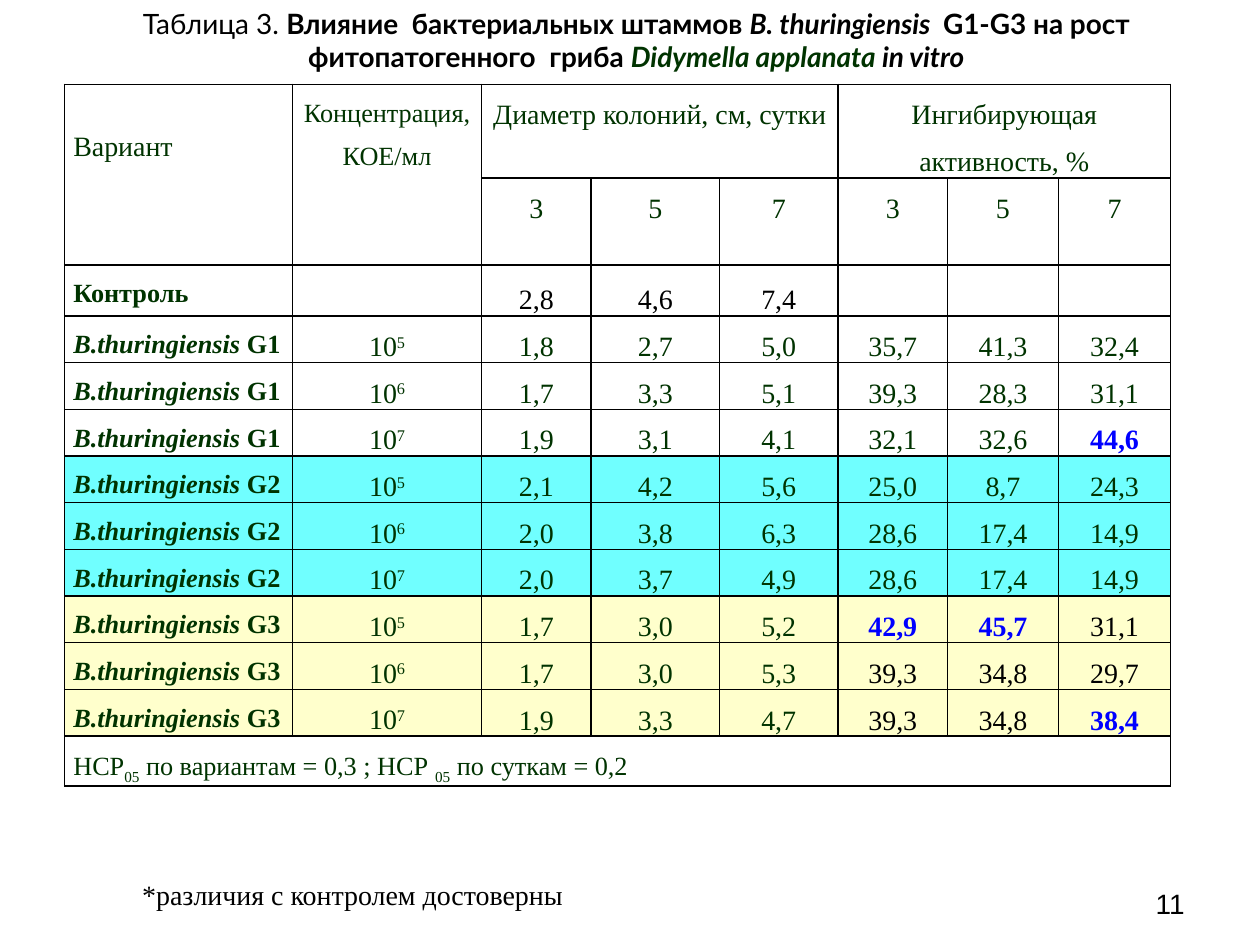
from dataclasses import dataclass

from lxml.etree import SubElement
from pptx import Presentation
from pptx.dml.color import RGBColor as Color
from pptx.enum.text import MSO_ANCHOR as Anchor
from pptx.enum.text import MSO_AUTO_SIZE as AutoSize
from pptx.enum.text import PP_ALIGN as Align
from pptx.oxml.ns import qn
from pptx.util import Pt


@dataclass(frozen=True)
class Theme:
    black: str = "000000"
    green: str = "003300"
    blue: str = "0000FF"
    cyan: str = "70FFFF"
    cream: str = "FFFFCC"
    size: float = 16
    small: float = 15
    title_font: str = "Lato"
    body_font: str = "Times New Roman"
    number_font: str = "Arial"
    border: float = 1


THEME = Theme()


def write(frame, spans, font=THEME.body_font, size=THEME.size, color=THEME.green,
          bold=False, italic=False, align=Align.LEFT, spacing=1.0, after=0):
    """Write one paragraph; a span is a text or a (text, overrides) pair."""
    para = frame.paragraphs[0]
    para.alignment, para.line_spacing = align, spacing
    para.space_before, para.space_after = Pt(0), Pt(after)
    for item in [spans] if isinstance(spans, str) else spans:
        text, own = (item, {}) if isinstance(item, str) else item
        span = para.add_run()
        span.text = text
        span.font.name, span.font.size = font, Pt(size)
        span.font.bold = own.get("bold", bold)
        span.font.italic = own.get("italic", italic)
        span.font.color.rgb = Color.from_string(own.get("color", color))
        if "baseline" in own:
            span.font._element.set("baseline", str(own["baseline"] * 1000))


class SlideBuilder:
    def __init__(self, deck, theme):
        self.theme = theme
        self.page = deck.slides.add_slide(deck.slide_layouts[5])

    def title(self, spans, left, top, width, height):
        box = self.page.shapes.title
        box.left, box.top, box.width, box.height = map(Pt, (left, top, width, height))
        frame = box.text_frame
        frame.word_wrap, frame.auto_size = True, AutoSize.NONE
        frame.vertical_anchor = Anchor.MIDDLE
        write(frame, spans, font=self.theme.title_font, color=self.theme.black,
              bold=True, align=Align.CENTER)

    def text(self, words, left, top, width, height, anchor=Anchor.TOP,
             fit=AutoSize.NONE, **style):
        frame = self.page.shapes.add_textbox(*map(Pt, (left, top, width, height))).text_frame
        frame.word_wrap, frame.auto_size = True, fit
        frame.vertical_anchor = anchor
        write(frame, words, color=self.theme.black, **style)

    def table(self, left, top, widths, heights):
        frame = self.page.shapes.add_table(
            len(heights), len(widths), Pt(left), Pt(top), Pt(sum(widths)), Pt(sum(heights)))
        grid = frame.table
        grid.first_row = grid.horz_banding = False
        for column, width in zip(grid.columns, widths):
            column.width = Pt(width)
        for row, height in zip(grid.rows, heights):
            row.height = Pt(height)
            for cell in row.cells:
                cell.fill.background()
                self.border(cell)
        return grid

    def border(self, cell):
        props = cell._tc.get_or_add_tcPr()
        for index, side in enumerate(("a:lnL", "a:lnR", "a:lnT", "a:lnB")):
            line = SubElement(props, qn(side), w=str(Pt(self.theme.border)))
            fill = SubElement(line, qn("a:solidFill"))
            SubElement(fill, qn("a:srgbClr"), val=self.theme.black)
            props.insert(index, line)

    def cell(self, cell, spans, fill=None, anchor=Anchor.TOP, side=5, top=0, **style):
        if fill:
            cell.fill.solid()
            cell.fill.fore_color.rgb = Color.from_string(fill)
        cell.vertical_anchor = anchor
        cell.margin_left = cell.margin_right = Pt(side)
        cell.margin_top, cell.margin_bottom = Pt(top), Pt(0)
        write(cell.text_frame, spans, **style)


# Colony diameters and inhibition for each strain, at 10^5, 10^6 and 10^7
CONTROL = "2,8 4,6 7,4"
STRAINS = {
    "G1": (None, ["1,8 2,7 5,0 35,7 41,3 32,4",
                  "1,7 3,3 5,1 39,3 28,3 31,1",
                  "1,9 3,1 4,1 32,1 32,6 44,6"]),
    "G2": (THEME.cyan, ["2,1 4,2 5,6 25,0 8,7 24,3",
                        "2,0 3,8 6,3 28,6 17,4 14,9",
                        "2,0 3,7 4,9 28,6 17,4 14,9"]),
    "G3": (THEME.cream, ["1,7 3,0 5,2 42,9 45,7 31,1",
                         "1,7 3,0 5,3 39,3 34,8 29,7",
                         "1,9 3,3 4,7 39,3 34,8 38,4"]),
}
BEST = {"44,6", "42,9", "45,7", "38,4"}


def fill_header(builder, grid):
    for first, last in (((0, 0), (1, 0)), ((0, 1), (1, 1)), ((0, 2), (0, 4)), ((0, 5), (0, 7))):
        grid.cell(*first).merge(grid.cell(*last))
    builder.cell(grid.cell(0, 0), "Вариант", top=18, spacing=1.5)
    centred = dict(align=Align.CENTER, spacing=1.5)
    builder.cell(grid.cell(0, 1), "Концентрация, КОЕ/мл", size=THEME.small, **centred)
    builder.cell(grid.cell(0, 2), "Диаметр колоний, см, сутки", **centred)
    builder.cell(grid.cell(0, 5), "Ингибирующая активность, %", **centred)
    for column, day in enumerate("357" * 2, start=2):
        builder.cell(grid.cell(1, column), day, **centred)


def fill_values(builder, grid, row, values, fill=None, strain=None):
    for column, value in enumerate(values.split(), start=2):
        inhibition = column > 4
        best = inhibition and value in BEST
        black = strain is None or (strain == "G3" and inhibition)
        color = THEME.blue if best else THEME.black if black else THEME.green
        layout = dict(side=1) if inhibition else dict(spacing=1.15, after=10)
        builder.cell(grid.cell(row, column), value, fill=fill, anchor=Anchor.BOTTOM, top=1,
                     color=color, bold=best, align=Align.CENTER, **layout)


def fill_body(builder, grid):
    label = dict(size=THEME.small, bold=True, spacing=1.5)
    builder.cell(grid.cell(2, 0), "Контроль", **label)
    fill_values(builder, grid, 2, CONTROL)
    row = 3
    for strain, (fill, lines) in STRAINS.items():
        for power, values in enumerate(lines, start=5):
            builder.cell(grid.cell(row, 0), [("B.thuringiensis", {"italic": True}), f" {strain}"],
                         fill=fill, **label)
            builder.cell(grid.cell(row, 1), ["10", (str(power), {"baseline": 30})],
                         fill=fill, align=Align.CENTER, spacing=1.5)
            fill_values(builder, grid, row, values, fill, strain)
            row += 1
    # Least significant difference across the full width
    grid.cell(row, 0).merge(grid.cell(row, 7))
    index = ("05", {"baseline": -25})
    builder.cell(grid.cell(row, 0),
                 ["НСР", index, " по вариантам = 0,3 ; НСР ", index, " по суткам = 0,2"],
                 size=THEME.small, spacing=1.5)


def main():
    deck = Presentation()
    deck.slide_width, deck.slide_height = Pt(720), Pt(540)
    builder = SlideBuilder(deck, THEME)

    # Title
    builder.title([("Таблица 3. ", {"bold": False}),
                   "Влияние  бактериальных штаммов ",
                   ("B. thuringiensis  ", {"italic": True}),
                   "G1-G3 на рост фитопатогенного  гриба ",
                   ("Didymella applanata ", {"italic": True, "color": THEME.green}),
                   ("in vitro", {"italic": True})], 39.6, 0, 648, 45.4)

    # Results table
    grid = builder.table(36.9, 48.2, [130.3, 108, 62.6, 73.4, 67.7, 62.6, 63.4, 64.1],
                         [53.5, 49.4, 28.6] + [26.7] * 9 + [28])
    fill_header(builder, grid)
    fill_body(builder, grid)

    # Footnote and page number
    builder.text("*различия с контролем достоверны", 74.2, 498.2, 360, 26.6,
                 fit=AutoSize.SHAPE_TO_FIT_TEXT)
    builder.text("11", 516.2, 491.8, 167.8, 37.4, anchor=Anchor.BOTTOM,
                 font=THEME.number_font, align=Align.RIGHT)
    deck.save("out.pptx")


if __name__ == "__main__":
    main()
